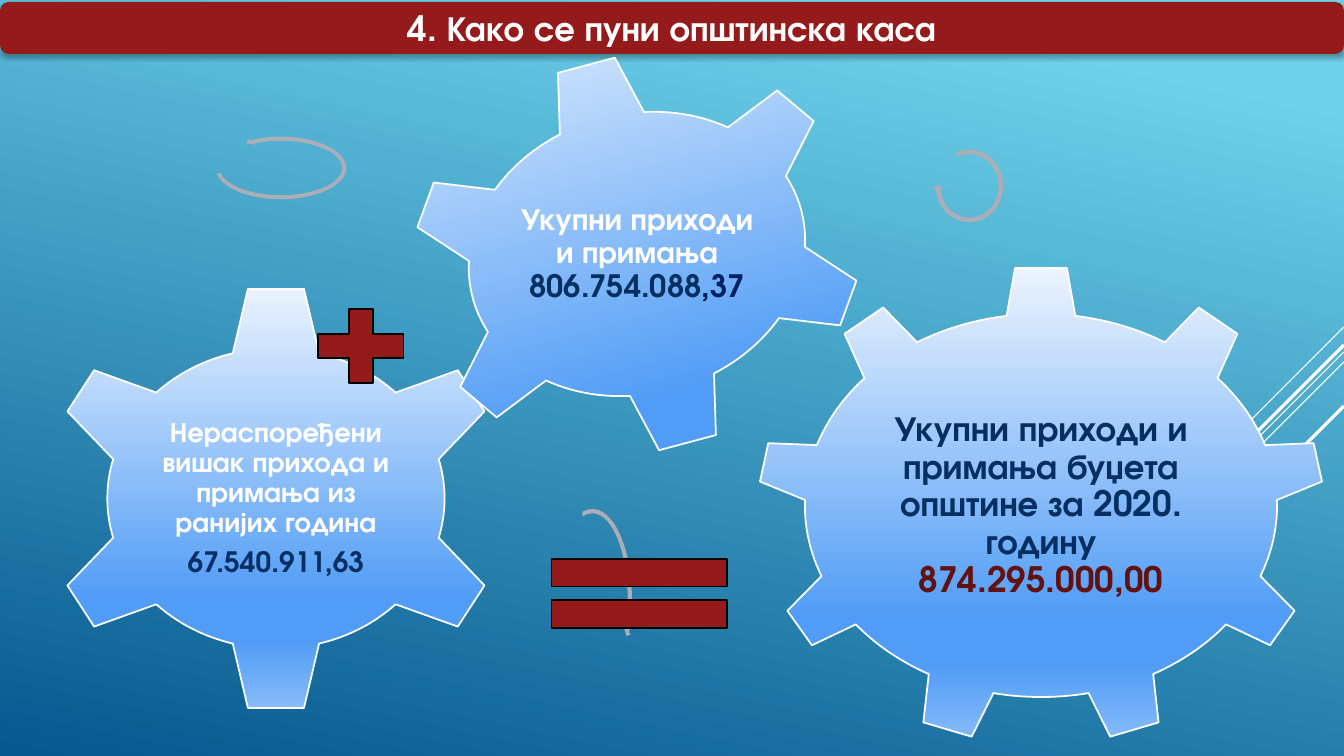
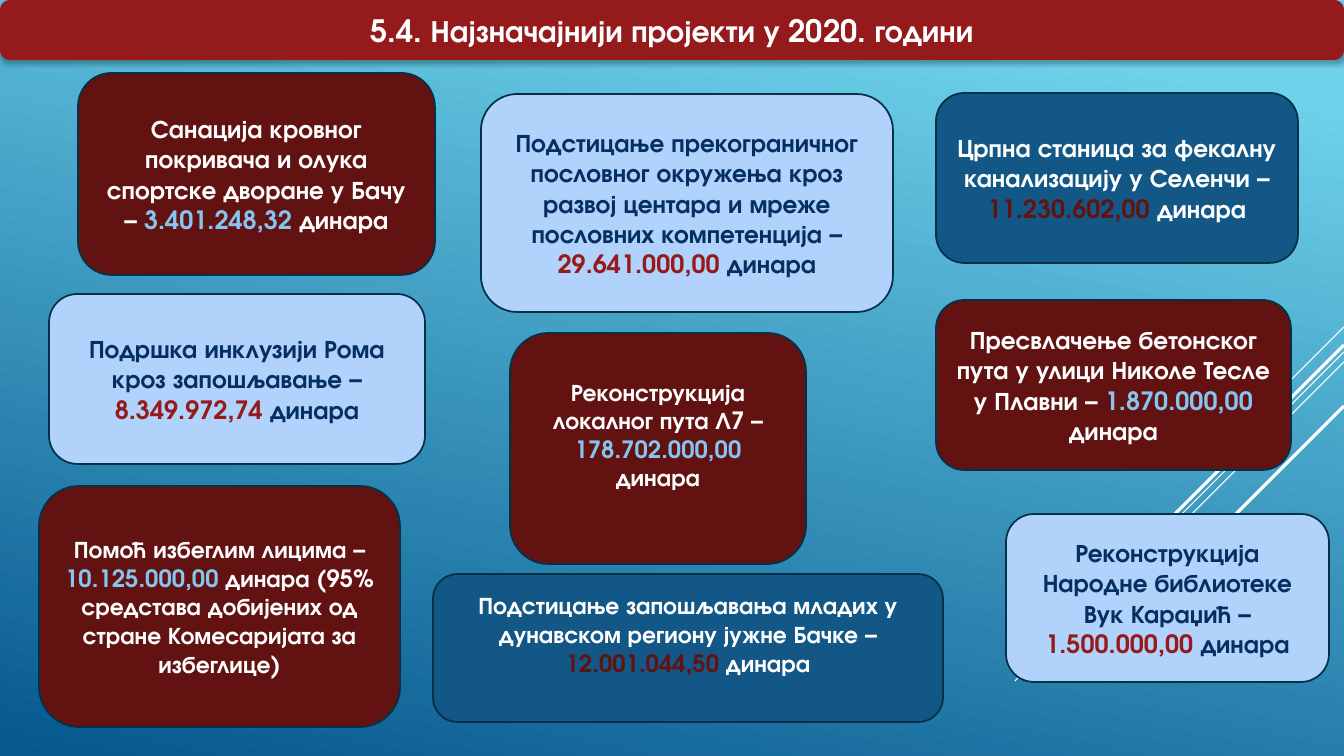
"""Build two slides on municipal revenue and projects."""
from copy import deepcopy

from pptx import Presentation
from pptx.dml.color import RGBColor
from pptx.enum.shapes import MSO_CONNECTOR, MSO_SHAPE
from pptx.enum.text import MSO_ANCHOR, PP_ALIGN
from pptx.oxml import parse_xml
from pptx.oxml.ns import nsdecls
from pptx.util import Pt

EMU_PER_PX = 914400 / 100.8
PAGE_WIDTH, PAGE_HEIGHT = 1344, 756
FONT = "TeX Gyre Adventor"

WHITE = RGBColor(0xFF, 0xFF, 0xFF)
BLACK = RGBColor(0x00, 0x00, 0x00)
RED = RGBColor(0x94, 0x1A, 0x1B)
MAROON = RGBColor(0x63, 0x12, 0x12)
NAVY = RGBColor(0x05, 0x2F, 0x61)
DEEP_NAVY = RGBColor(0x00, 0x20, 0x60)
STEEL = RGBColor(0x12, 0x57, 0x85)
PALE_BLUE = RGBColor(0xB1, 0xD3, 0xFB)
SKY = RGBColor(0x86, 0xC5, 0xEF)
CARD_EDGE = RGBColor(0x04, 0x31, 0x48)
GREY = RGBColor(0xAB, 0xAD, 0xB7)
GEAR_TOP = RGBColor(0xEC, 0xF4, 0xFE)
GEAR_MIDDLE = RGBColor(0x50, 0x9C, 0xF6)
GEAR_BOTTOM = RGBColor(0x8B, 0xBD, 0xF9)
PAGE_TOP = RGBColor(0x6E, 0xD2, 0xEB)
PAGE_BOTTOM = RGBColor(0x06, 0x58, 0x8E)

STRAIGHT = MSO_CONNECTOR.STRAIGHT
ROUNDED = MSO_SHAPE.ROUNDED_RECTANGLE
GEAR_6, GEAR_9 = MSO_SHAPE.GEAR_6, MSO_SHAPE.GEAR_9
PLUS, EQUAL = MSO_SHAPE.MATH_PLUS, MSO_SHAPE.MATH_EQUAL
ARROW, LEFT_ARROW = MSO_SHAPE.CIRCULAR_ARROW, MSO_SHAPE.LEFT_CIRCULAR_ARROW
MIDDLE, CENTER = MSO_ANCHOR.MIDDLE, PP_ALIGN.CENTER

PAGE_STOPS = [(0.1, PAGE_TOP), (1, PAGE_BOTTOM)]
GEAR_STOPS = [(0, GEAR_TOP), (0.74, GEAR_MIDDLE), (0.83, GEAR_MIDDLE), (1, GEAR_BOTTOM)]
RAYS = [(327, 100, 0.75), (352, 329, 0.75), (362, 209, 0.75), (345, 193, 2.25), (406, 140, 2.25)]
GEAR_PARA = {"line_spacing": 0.9, "space_after": Pt(7)}
CARD_STYLES = {
    "maroon": (MAROON, WHITE, SKY),
    "pale": (PALE_BLUE, NAVY, RED),
    "steel": (STEEL, WHITE, MAROON),
}

GEARS = [
    (GEAR_9, (757, 266, 568, 479), 0, (352, 246), 25, [
        [("Укупни приходи и примања буџета општине за 2020. годину ", NAVY),
         ("874.295.000,00", MAROON)]]),
    (GEAR_6, (43, 284, 466, 429), 0, (239, 212), 20, [
        [("Нераспоређени вишак прихода и примања из ранијих година", WHITE)],
        [("67.540.911,63", NAVY)]]),
    (GEAR_6, (407, 54, 460, 400), 345, (251, 232), 22, [
        [("Укупни приходи и примања ", WHITE), ("806.754.088", NAVY), (",37", DEEP_NAVY)]]),
]
ARROWS = [
    (ARROW, (550, 506, 85, 186), (0.05, 2.99, 25.46, 157.98, 0.06)),
    (ARROW, (932, 146, 75, 80), (0.06, 4.3, 104.89, 148.38, 0.08)),
    (LEFT_ARROW, (213, 134, 136, 68), (0.06, 3.94, 133.14, 105.08, 0.07)),
]
SIGNS = [(PLUS, (303, 296, 116, 100)), (EQUAL, (520, 535, 239, 117))]

CARDS = [
    ((78, 73, 357, 202), "maroon", 18, 0,
     "Санација кровног покривача и олука спортске дворане у Бачу – ", "3.401.248,32 ", "динара"),
    ((481, 94, 412, 218), "pale", 18, 0,
     "Подстицање прекограничног пословног окружења кроз развој центара и мреже "
     "пословних компетенција – ", "29.641.000,00 ", "динара"),
    ((39, 486, 361, 241), "maroon", 17, 0, "Помоћ избеглим лицима – ", "10.125.000,00 ",
     "динара (95% средстава добијених од стране Комесаријата за избеглице)"),
    ((936, 93, 362, 170), "steel", 18, 0,
     "Црпна станица за фекалну канализацију у Селенчи – ", "11.230.602,00 ", "динара"),
    ((49, 294, 376, 170), "pale", 18, 0,
     "Подршка инклузији Рома кроз запошљавање – ", "8.349.972,74 ", "динара"),
    ((936, 300, 355, 170), "maroon", 18, 0,
     "Пресвлачење бетонског пута у улици Николе Тесле у Плавни – ", "1.870.000,00 ", "динара"),
    ((510, 333, 296, 231), "maroon", 17, 28,
     "Реконструкција локалног пута Л7 – ", "178.702.000,00 ", "динара"),
    ((1006, 514, 323, 168), "pale", 18, 0,
     "Реконструкција Народне библиотеке Вук Караџић – ", "1.500.000,00 ", "динара"),
    ((433, 574, 510, 148), "steel", 17, 28,
     "Подстицање запошљавања младих у дунавском региону јужне Бачке – ",
     "12.001.044,50 ", "динара"),
]


def px(length):
    """Turn pixels into EMU."""
    return round(length * EMU_PER_PX)


def apply(target, values):
    """Set every attribute named in a dict of format values."""
    for name, value in values.items():
        setattr(target, name, value)


def fill_gradient(fill, element, stops, angle):
    """Fill with a linear gradient, its angle clockwise in degrees."""
    fill.gradient()
    fill.gradient_angle = 360 - angle
    stop_list = element.xpath(".//a:gsLst")[0]
    while len(stop_list) < len(stops):
        stop_list.append(deepcopy(stop_list[0]))
    for stop, (position, color) in zip(fill.gradient_stops, stops):
        stop.position = position
        stop.color.rgb = color


def add_figure(page, kind, box, color=None, edge=None):
    """Add a preset shape without shadow, optionally filled and outlined."""
    shape = page.shapes.add_shape(kind, *map(px, box))
    shape.shadow.inherit = False
    if color is not None:
        shape.fill.solid()
        shape.fill.fore_color.rgb = color
    if edge is None:
        shape.line.fill.background()
    else:
        shape.line.color.rgb = edge
        shape.line.width = Pt(1.25)
    return shape


def write_text(shape, paragraphs, size, para_format=None, frame_format=None):
    """Write centred bold paragraphs given as lists of text and colour."""
    frame = shape.text_frame
    apply(frame, {"word_wrap": True, "vertical_anchor": MIDDLE, **(frame_format or {})})
    for index, spans in enumerate(paragraphs):
        para = frame.add_paragraph() if index else frame.paragraphs[0]
        apply(para, {"alignment": CENTER, **(para_format or {})})
        for text, color in spans:
            span = para.add_run()
            span.text = text
            apply(span.font, {"name": FONT, "size": Pt(size), "bold": True})
            span.font.color.rgb = color


def add_page(deck):
    """Add a blank page with the shared background and diagonal rays."""
    page = deck.slides.add_slide(deck.slide_layouts[6])
    fill_gradient(page.background.fill, page.element, PAGE_STOPS, 102)
    for top, run, weight in RAYS:
        ends = (PAGE_WIDTH, top, PAGE_WIDTH - run, top + run)
        ray = page.shapes.add_connector(STRAIGHT, *map(px, ends))
        ray.line.color.rgb = WHITE
        ray.line.width = Pt(weight)
        ray.element.spPr.append(parse_xml(f"<a:effectLst {nsdecls('a')}/>"))
    return page


def add_title(page, top, height, text, size):
    """Add the full-width title band with a soft shadow."""
    band = add_figure(page, ROUNDED, (0, top, PAGE_WIDTH, height), RED)
    band.element.xpath(".//a:effectLst")[0].append(parse_xml(
        f'<a:outerShdw {nsdecls("a")} blurRad="{Pt(3.5)}" dist="{Pt(2.2)}" dir="5400000" '
        'rotWithShape="0"><a:srgbClr val="000000"><a:alpha val="32000"/></a:srgbClr>'
        '</a:outerShdw>'))
    write_text(band, [[(text, WHITE)]], size)


def add_gear(page, kind, box, rotation, text_size, size, paragraphs):
    """Add a gear with an upright text box at its centre."""
    gear = add_figure(page, kind, box, edge=WHITE)
    fill_gradient(gear.fill, gear.element, GEAR_STOPS, 90)
    gear.rotation = rotation
    left, top, width, height = box
    text_width, text_height = text_size
    label_box = (left + (width - text_width) / 2, top + (height - text_height) / 2, *text_size)
    label = page.shapes.add_textbox(*map(px, label_box))
    sides = ("left", "top", "right", "bottom")
    write_text(label, paragraphs, size, GEAR_PARA, {f"margin_{side}": px(3) for side in sides})


def add_card(page, box, style, size, lift, lead, amount, ending):
    """Add a project card, its text raised by half of the lift."""
    color, ink, accent = CARD_STYLES[style]
    card = add_figure(page, ROUNDED, box, color, CARD_EDGE)
    spans = [(lead, ink), (amount, accent), (ending, ink)]
    write_text(card, [spans], size, frame_format={"margin_bottom": px(5 + lift)})


def build_revenue_page(deck):
    """Build the page of gears that add up to the budget."""
    page = add_page(deck)
    add_title(page, 2, 52, "4. Како се пуни општинска каса", 25)
    for gear in GEARS:
        add_gear(page, *gear)
    for kind, box, adjustments in ARROWS:
        arrow = add_figure(page, kind, box, GREY)
        for index, value in enumerate(adjustments):
            arrow.adjustments[index] = value
    for kind, box in SIGNS:
        add_figure(page, kind, box, RED, BLACK)


def build_projects_page(deck):
    """Build the page of project cards."""
    page = add_page(deck)
    add_title(page, 0, 60, "5.4. Најзначајнији пројекти у 2020. години", 22)
    for card in CARDS:
        add_card(page, *card)


def main():
    """Build and save the deck."""
    deck = Presentation()
    apply(deck, {"slide_width": px(PAGE_WIDTH), "slide_height": px(PAGE_HEIGHT)})
    build_revenue_page(deck)
    build_projects_page(deck)
    deck.save("out.pptx")


if __name__ == "__main__":
    main()
